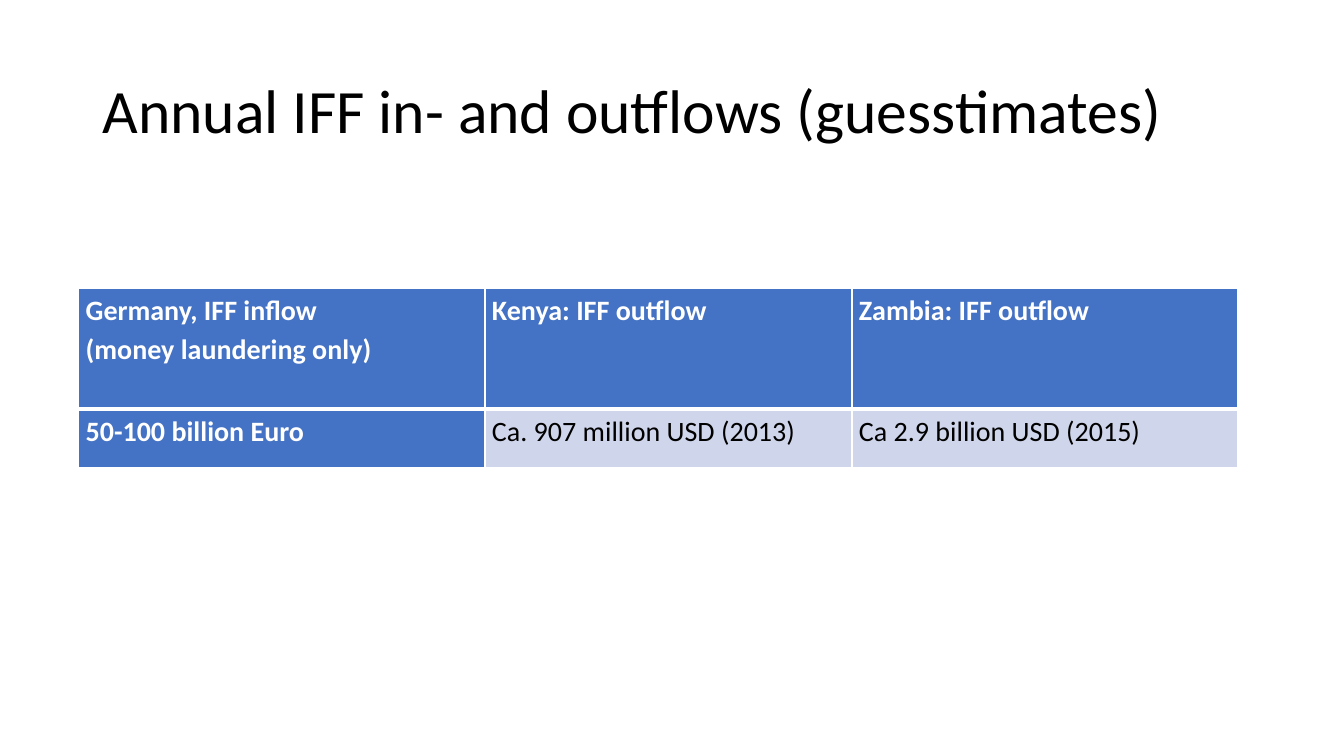
from dataclasses import dataclass

from lxml import etree
from pptx import Presentation
from pptx import util as u
from pptx.dml import color
from pptx.enum import text
from pptx.oxml import ns


@dataclass(frozen=True)
class Theme:
    font: str = "Calibri"
    black: str = "000000"
    white: str = "FFFFFF"
    blue: str = "4472C4"
    pale: str = "CFD5EA"
    title_size: int = 44
    cell_size: int = 20
    title_spacing: float = 0.9
    cell_spacing: float = 1.15
    rule: int = 1
    header_rule: int = 3


@dataclass(frozen=True)
class Entry:
    lines: tuple[str, ...]
    strong: bool = True
    bottom_rule: int = 1


THEME = Theme()
COLUMN_WIDTHS = (4.03, 3.64, 3.83)
ROW_HEIGHTS = (1.2, 0.58)
HEADER_RULE = THEME.header_rule
ENTRIES = (
    (
        Entry(("Germany, IFF inflow", "(money laundering only)"), bottom_rule=HEADER_RULE),
        Entry(("Kenya: IFF outflow",), bottom_rule=HEADER_RULE),
        Entry(("Zambia: IFF outflow",), bottom_rule=HEADER_RULE),
    ),
    (
        Entry(("50-100 billion Euro",)),
        Entry(("Ca. 907 million USD (2013)",), strong=False),
        Entry(("Ca 2.9 billion USD (2015)",), strong=False),
    ),
)


def apply(target, values: dict) -> None:
    for name, value in values.items():
        setattr(target, name, value)


def write_lines(frame, lines: tuple[str, ...], spacing: float,
                size: int, ink: str, bold: bool) -> None:
    for index, line in enumerate(lines):
        para = frame.paragraphs[0] if index == 0 else frame.add_paragraph()
        apply(para, {"line_spacing": spacing, "alignment": text.PP_ALIGN.LEFT})
        span = para.add_run()
        span.text = line
        apply(span.font, {"name": THEME.font, "size": u.Pt(size), "bold": bold})
        span.font.color.rgb = color.RGBColor.from_string(ink)


def add_borders(cell, bottom_rule: int, top_rule: int) -> None:
    properties = cell._tc.get_or_add_tcPr()
    rules = {"L": THEME.rule, "R": THEME.rule, "T": top_rule, "B": bottom_rule}
    for side, width in rules.items():
        line = etree.SubElement(properties, ns.qn(f"a:ln{side}"), w=str(u.Pt(width)))
        fill = etree.SubElement(line, ns.qn("a:solidFill"))
        etree.SubElement(fill, ns.qn("a:srgbClr"), val=THEME.white)


def fill_cell(cell, entry: Entry, top_rule: int) -> None:
    apply(cell, {
        "margin_left": u.Inches(0.07),
        "margin_right": u.Inches(0.07),
        "margin_top": 0,
        "margin_bottom": 0,
        "vertical_anchor": text.MSO_ANCHOR.TOP,
    })
    add_borders(cell, entry.bottom_rule, top_rule)
    cell.fill.solid()
    background = THEME.blue if entry.strong else THEME.pale
    cell.fill.fore_color.rgb = color.RGBColor.from_string(background)
    ink = THEME.white if entry.strong else THEME.black
    write_lines(cell.text_frame, entry.lines, THEME.cell_spacing,
                THEME.cell_size, ink, entry.strong)


def add_title(page, title: str) -> None:
    box = page.shapes.add_textbox(
        u.Inches(0.92), u.Inches(0.4), u.Inches(11.5), u.Inches(1.45))
    apply(box.text_frame, {
        "word_wrap": True,
        "vertical_anchor": text.MSO_ANCHOR.MIDDLE,
    })
    write_lines(box.text_frame, (title,), THEME.title_spacing,
                THEME.title_size, THEME.black, False)


def add_flow_table(page) -> None:
    table = page.shapes.add_table(
        len(ROW_HEIGHTS), len(COLUMN_WIDTHS), u.Inches(0.78), u.Inches(2.86),
        u.Inches(sum(COLUMN_WIDTHS)), u.Inches(sum(ROW_HEIGHTS))).table
    for column, width in zip(table.columns, COLUMN_WIDTHS):
        column.width = u.Inches(width)
    for row, height in zip(table.rows, ROW_HEIGHTS):
        row.height = u.Inches(height)
    for row_index, entries in enumerate(ENTRIES):
        for column_index, entry in enumerate(entries):
            above = ENTRIES[row_index - 1][column_index] if row_index else None
            top_rule = above.bottom_rule if above else THEME.rule
            fill_cell(table.cell(row_index, column_index), entry, top_rule)


def main() -> None:
    deck = Presentation()
    apply(deck, {"slide_width": u.Inches(13.33), "slide_height": u.Inches(7.5)})
    page = deck.slides.add_slide(deck.slide_layouts[6])
    add_title(page, "Annual IFF in- and outflows (guesstimates)")
    add_flow_table(page)
    deck.save("out.pptx")


if __name__ == "__main__":
    main()
